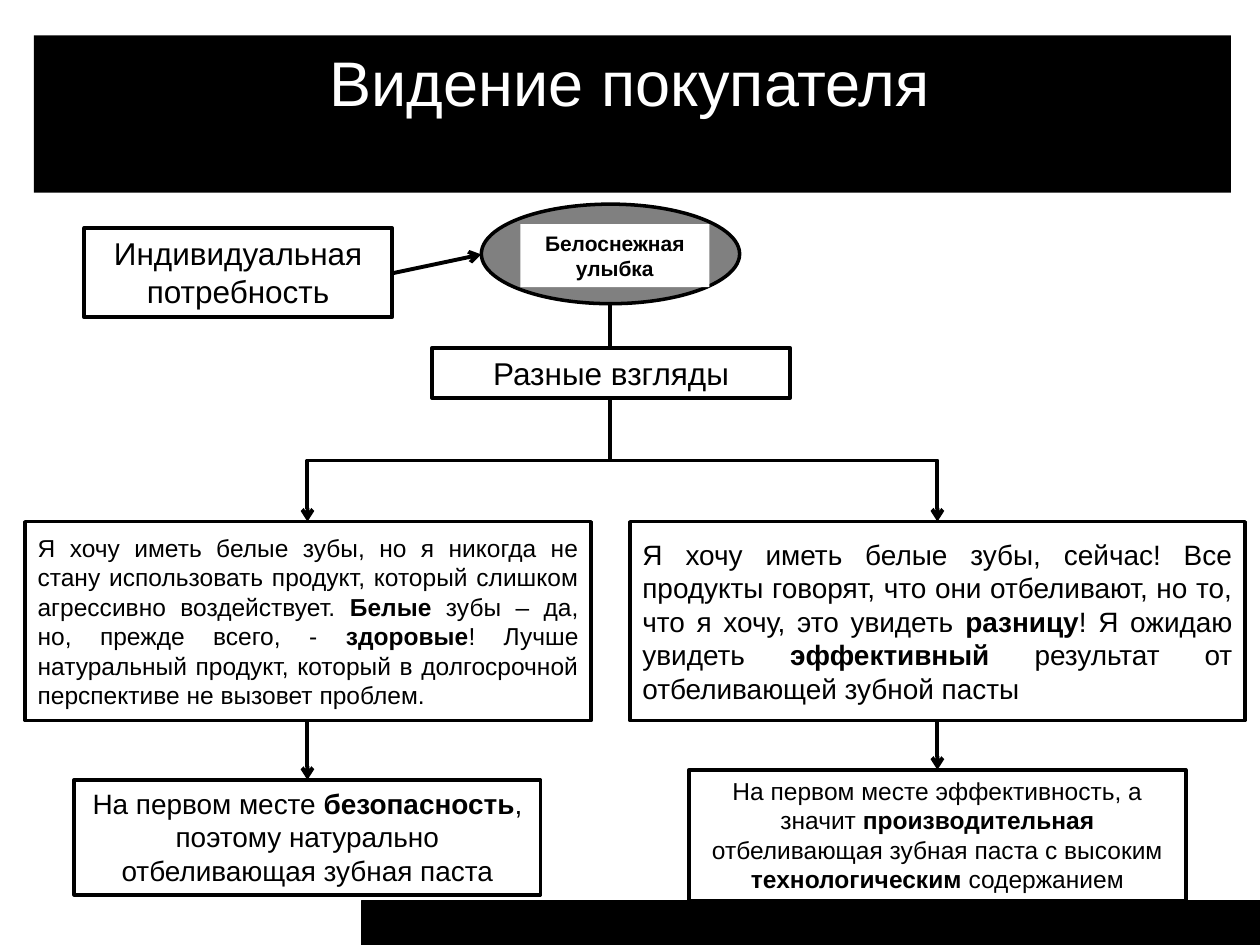
from lxml.etree import SubElement
from pptx import Presentation
from pptx.dml.color import RGBColor
from pptx.enum.shapes import MSO_CONNECTOR, MSO_SHAPE
from pptx.enum.text import MSO_ANCHOR, PP_ALIGN
from pptx.oxml.ns import qn
from pptx.util import Pt

SCALE = 9144
BLACK, WHITE, GRAY = "000000", "FFFFFF", "808080"


def px(length):
    """Turn px (100 to the inch) into EMU."""
    return int(length * SCALE)


def color(value):
    """Turn a hex string into a colour."""
    return RGBColor.from_string(value)


def write(shape, text, size, align=PP_ALIGN.CENTER, anchor=MSO_ANCHOR.TOP, ink=BLACK):
    """Fill a shape with one paragraph; asterisks enclose bold words."""
    frame = shape.text_frame
    frame.word_wrap = True
    frame.vertical_anchor = anchor
    para = frame.paragraphs[0]
    para.alignment = align
    para.font.name = "Arial"
    para.font.size = Pt(size)
    para.font.color.rgb = color(ink)
    for index, part in enumerate(text.split("*")):
        if part:
            span = para.add_run()
            span.text = part
            span.font.bold = index % 2 == 1


def add_box(page, box, fill=WHITE, line=2.25, kind=MSO_SHAPE.RECTANGLE):
    """Add a filled shape with a black outline, or none if line is 0."""
    shape = page.shapes.add_shape(kind, *map(px, box))
    shape.shadow.inherit = False
    shape.fill.solid()
    shape.fill.fore_color.rgb = color(fill)
    if line:
        shape.line.color.rgb = color(BLACK)
        shape.line.width = Pt(line)
    else:
        shape.line.fill.background()
    return shape


def add_link(page, start, end, arrow=True, kind=MSO_CONNECTOR.STRAIGHT):
    """Add a black connector, with an open arrowhead if asked."""
    link = page.shapes.add_connector(kind, *map(px, start + end))
    link.line.color.rgb = color(BLACK)
    link.line.width = Pt(2.25)
    if arrow:
        SubElement(link.line._get_or_add_ln(), qn("a:tailEnd"), type="arrow")
    SubElement(link._element.spPr, qn("a:effectLst"))
    return link


def add_branch(page, start, end):
    """Add an elbow that leaves downwards, runs sideways and ends downwards."""
    (x1, y1), (x2, y2) = start, end
    middle_x, middle_y = (x1 + x2) / 2, (y1 + y2) / 2
    rightward = x2 > x1
    half_width = (y2 - y1) / 2 * (-1 if rightward else 1)
    half_height = abs(x2 - x1) / 2
    link = add_link(page, (middle_x - half_width, middle_y - half_height),
                    (middle_x + half_width, middle_y + half_height), kind=MSO_CONNECTOR.ELBOW)
    link._element.spPr.xfrm.set("rot", str((270 if rightward else 90) * 60000))


def add_header(page, box):
    """Add the black title band and its title."""
    left, top, width, height = box
    add_box(page, box, fill=BLACK, line=0)
    title = page.shapes.add_textbox(*map(px, (left + 23, top + 2, width - 50, height - 1)))
    write(title, "Видение покупателя", 36, ink=WHITE)


def add_need(page, box):
    """Add the need box, its arrow and the ellipse with a label."""
    left, top, width, height = box
    write(add_box(page, (left, top + 19, 244, 71)), "Индивидуальная потребность", 18)
    ellipse_left, middle = left + width - 205, top + 40
    add_link(page, (left + 244, top + 55), (ellipse_left, middle))
    add_box(page, (ellipse_left, top, 205, 79), fill=GRAY, line=2, kind=MSO_SHAPE.OVAL)
    label = add_box(page, (ellipse_left + 31, top + 16, 150, 50), line=0)
    write(label, "*Белоснежная улыбка*", 12)


def add_views(page, box, targets):
    """Add the views box with its stem and a branch to each target."""
    left, top, width, height = box
    center, bottom = left + width // 2 - 1, top + height
    write(add_box(page, box), "Разные взгляды", 18)
    add_link(page, (center, top - 35), (center, top), arrow=False)
    for target in targets:
        add_branch(page, (center, bottom + 1), target)


def add_opinion(page, box, opinion, size, result_box, result, result_size):
    """Add an opinion, and below it an arrow to its result."""
    left, top, width, height = box
    dx, dy, result_width, result_height = result_box
    center, bottom = left + width // 2, top + height
    write(add_box(page, box, line=2), opinion, size, PP_ALIGN.JUSTIFY, MSO_ANCHOR.MIDDLE)
    write(add_box(page, (left + dx, top + dy, result_width, result_height)), result, result_size)
    add_link(page, (center, bottom), (center, top + dy))


def main():
    """Build and save the slide."""
    deck = Presentation()
    deck.slide_width, deck.slide_height = px(1000), px(750)
    page = deck.slides.add_slide(deck.slide_layouts[6])
    add_box(page, (287, 715, 713, 35), fill=BLACK, line=0.75)
    add_header(page, (27, 28, 950, 125))
    add_need(page, (67, 162, 520, 90))
    add_views(page, (343, 276, 284, 40), [(244, 414), (744, 414)])
    add_opinion(
        page, (20, 414, 449, 158),
        "Я хочу иметь белые зубы, но я никогда не стану использовать продукт, "
        "который слишком агрессивно воздействует. *Белые* зубы – да, но, прежде всего, "
        "- *здоровые*! Лучше натуральный продукт, который в долгосрочной перспективе "
        "не вызовет проблем.", 14,
        (39, 205, 370, 91),
        "На первом месте *безопасность*, поэтому натурально отбеливающая зубная паста", 16)
    add_opinion(
        page, (500, 414, 488, 158),
        "Я хочу иметь белые зубы, сейчас! Все продукты говорят, что они отбеливают, "
        "но то, что я хочу, это увидеть *разницу*! Я ожидаю увидеть *эффективный* "
        "результат от отбеливающей зубной пасты", 16,
        (47, 197, 394, 104),
        "На первом месте эффективность, а значит *производительная* отбеливающая "
        "зубная паста с высоким *технологическим* содержанием", 14)
    deck.save("out.pptx")


if __name__ == "__main__":
    main()
